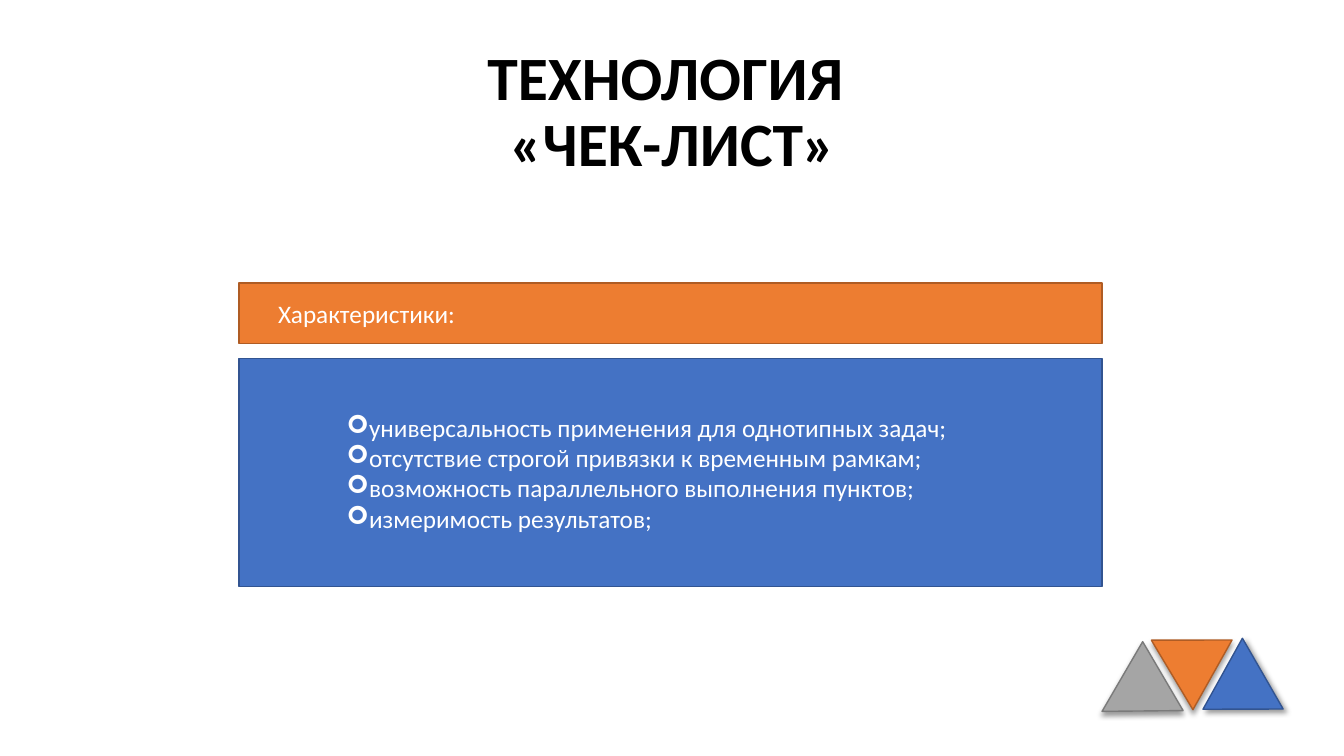
"""Build the checklist technology slide."""
from lxml.etree import SubElement as Sub
from pptx import Presentation
from pptx.dml.color import RGBColor as RGB
from pptx.enum.shapes import MSO_SHAPE as Kind
from pptx.enum.text import MSO_ANCHOR as Anchor, PP_ALIGN as Align
from pptx.oxml.ns import qn
from pptx.util import Inches, Pt

HUES = {
    "black": "000000", "white": "FFFFFF",
    "blue": "4472C4", "blue edge": "325491",
    "orange": "ED7D31", "orange edge": "AF5C24",
    "gray": "A5A5A5", "gray edge": "7A7A7A",
}


def style(par, size, hue, bold=False):
    par.font.name = "Calibri"
    par.font.size = Pt(size)
    par.font.bold = bold
    par.font.color.rgb = RGB.from_string(HUES[hue])


def draw(kind, box, hue):
    shape = slide.shapes.add_shape(kind, *map(Inches, box))
    shape.shadow.inherit = False
    shape.fill.solid()
    shape.fill.fore_color.rgb = RGB.from_string(HUES[hue])
    shape.line.color.rgb = RGB.from_string(HUES[hue + " edge"])
    shape.line.width = Pt(1)
    return shape


deck = Presentation()
deck.slide_width, deck.slide_height = Inches(13.33), Inches(7.5)
slide = deck.slides.add_slide(deck.slide_layouts[5])

title = slide.shapes.title
title.left, title.top = Inches(0.92), Inches(0.4)
title.width, title.height = Inches(11.5), Inches(1.45)
title.text_frame.text = "ТЕХНОЛОГИЯ \v«ЧЕК-ЛИСТ»"
title.text_frame.vertical_anchor = Anchor.MIDDLE
head = title.text_frame.paragraphs[0]
head.alignment = Align.CENTER
head.line_spacing = 0.9
style(head, 44, "black", True)

traits = [
    "универсальность применения для однотипных задач;",
    "отсутствие строгой привязки к временным рамкам;",
    "возможность параллельного выполнения пунктов;",
    "измеримость результатов;",
]
panels = [
    (3.56, 2.26, "blue", traits, 0.68, "➢"),
    (2.81, 0.6, "orange", ["Характеристики:"], 0, None),
]
for top, height, hue, lines, indent, mark in panels:
    frame = draw(Kind.RECTANGLE, (2.37, top, 8.56, height), hue).text_frame
    frame.text = "\n".join(lines)
    frame.word_wrap = True
    frame.vertical_anchor = Anchor.MIDDLE
    for par in frame.paragraphs:
        par.alignment = Align.LEFT
        props = par._p.get_or_add_pPr()
        props.set("marL", str(Inches(0.29)))
        props.set("indent", str(Inches(indent)))
        if mark:
            Sub(props, qn("a:buFont"), typeface="Wingdings")
            Sub(props, qn("a:buChar"), char=mark)
        style(par, 18, "white")

signs = [
    (11.82, 6.51, 0.81, 240.1, "blue", 45),
    (11.42, 6.35, 0.8, 179.9, "orange", 90),
    (11.03, 6.54, 0.8, 120.2, "gray", 90),
]
for left, top, width, turn, hue, angle in signs:
    sign = draw(Kind.ISOSCELES_TRIANGLE, (left, top, width, 0.69), hue)
    sign.adjustments[0] = 0.487
    sign.rotation = turn
    effect = sign._element.spPr.find(qn("a:effectLst"))
    shade = Sub(effect, qn("a:outerShdw"), blurRad=str(Pt(4)), dist=str(Pt(3)),
                dir=str(angle * 60000), algn="ctr", rotWithShape="0")
    tint = Sub(shade, qn("a:srgbClr"), val=HUES["black"])
    Sub(tint, qn("a:alpha"), val="40000")

deck.save("out.pptx")
